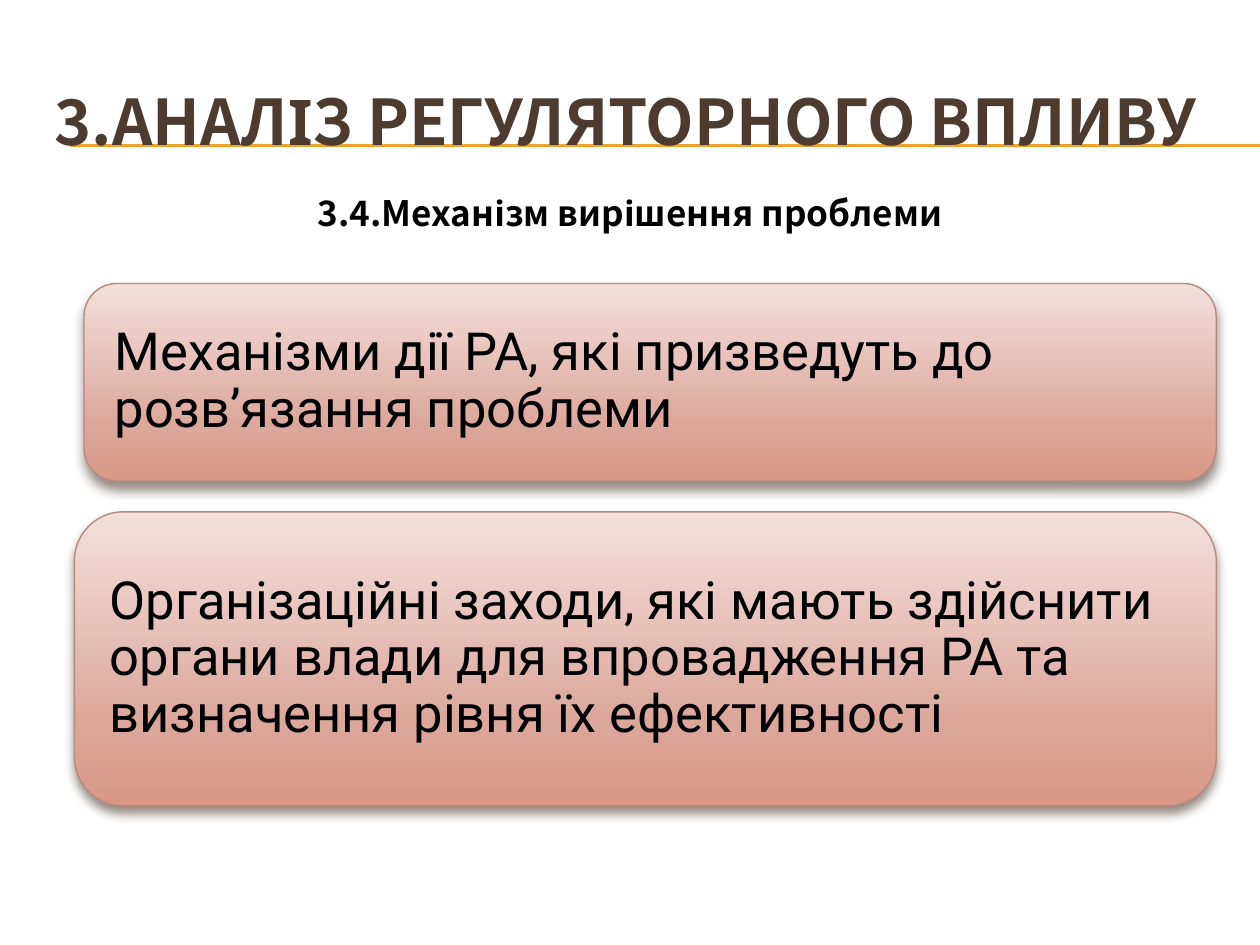
from pptx import Presentation
from pptx.dml.color import RGBColor as RGB
from pptx.enum.shapes import MSO_CONNECTOR as CONN, MSO_SHAPE as SHAPE
from pptx.enum.text import MSO_ANCHOR as ANCHOR, MSO_AUTO_SIZE as AUTO, PP_ALIGN as ALIGN
from pptx.oxml import parse_xml
from pptx.oxml.ns import nsdecls
from pptx.util import Pt

COLORS = {
    "title": "4E3B30", "text": "000000", "rule": "F0A22E", "border": "B58B80",
    "top": "F3E0DB", "middle": "DCA79B", "bottom": "D89787", "shadow": "4E3B30",
}
HEAD_FONT, BODY_FONT = "Noto Sans CJK KR", "Roboto"
GRADIENT = [(0, "top"), (72, "middle"), (100, "bottom")]


def color(name):
    return RGB.from_string(COLORS[name])


class SlideBuilder:
    def __init__(self, prs):
        self.s = prs.slides.add_slide(prs.slide_layouts[5])

    def set_text(self, sp, text, font, size, ink="text", bold=False, align=ALIGN.LEFT):
        tf = sp.text_frame
        tf.text = text
        tf.word_wrap = True
        p = tf.paragraphs[0]
        p.alignment = align
        f = p.runs[0].font
        f.name, f.size, f.bold = font, Pt(size), bold
        f.color.rgb = color(ink)
        return tf

    def title(self, text, x, y, w, h):
        sp = self.s.shapes.title
        sp.left, sp.top, sp.width, sp.height = map(Pt, (x, y, w, h))
        tf = self.set_text(sp, text, HEAD_FONT, 36, "title", bold=True)
        tf.auto_size = AUTO.NONE
        tf.vertical_anchor = ANCHOR.MIDDLE

    def subtitle(self, text, x, y, w, h):
        sp = self.s.shapes.add_textbox(*map(Pt, (x, y, w, h)))
        self.set_text(sp, text, HEAD_FONT, 20, bold=True, align=ALIGN.CENTER)

    def rule(self, x1, x2, y):
        """Draw a horizontal line behind everything else."""
        line = self.s.shapes.add_connector(CONN.STRAIGHT, Pt(x1), Pt(y), Pt(x2), Pt(y))
        line.line.color.rgb = color("rule")
        line.line.width = Pt(0.75)
        line.element.spPr.append(parse_xml(f"<a:effectLst {nsdecls('a')}/>"))
        self.s.shapes.element.insert(2, line.element)

    def card(self, text, x, y, w, h):
        sp = self.s.shapes.add_shape(SHAPE.ROUNDED_RECTANGLE, *map(Pt, (x, y, w, h)))
        sp.line.color.rgb = color("border")
        sp.line.width = Pt(0.79)
        self.gradient(sp)
        self.shadow(sp)
        tf = self.set_text(sp, text, BODY_FONT, 30)
        tf.vertical_anchor = ANCHOR.MIDDLE
        tf.margin_left = tf.margin_right = Pt(12)
        tf.paragraphs[0].line_spacing = 0.9

    def gradient(self, sp):
        stops = "".join(
            f'<a:gs pos="{pos * 1000}"><a:srgbClr val="{COLORS[name]}"/></a:gs>'
            for pos, name in GRADIENT)
        sp.element.spPr.find("{*}ln").addprevious(parse_xml(
            f'<a:gradFill {nsdecls("a")} rotWithShape="1"><a:gsLst>{stops}</a:gsLst>'
            '<a:lin ang="5400000" scaled="0"/></a:gradFill>'))

    def shadow(self, sp):
        sp.element.spPr.append(parse_xml(
            f'<a:effectLst {nsdecls("a")}>'
            f'<a:outerShdw blurRad="{Pt(6)}" dist="{Pt(4)}" dir="5400000" rotWithShape="0">'
            f'<a:srgbClr val="{COLORS["shadow"]}"><a:alpha val="60000"/></a:srgbClr>'
            '</a:outerShdw></a:effectLst>'))


def main():
    prs = Presentation()
    prs.slide_width, prs.slide_height = Pt(720), Pt(540)
    b = SlideBuilder(prs)
    b.title("3.АНАЛІЗ РЕГУЛЯТОРНОГО ВПЛИВУ", 24, 36, 684, 66)
    for y in (82.8, 83.5):
        b.rule(40, 720, y)
    b.subtitle("3.4.Механізм вирішення проблеми", 48, 106, 624, 32)
    b.card("Механізми дії РА, які призведуть до розв’язання проблеми",
           48, 162, 647, 113)
    b.card("Організаційні заходи, які мають здійснити органи влади для "
           "впровадження РА та визначення рівня їх ефективності",
           42.5, 292.5, 652.5, 168)
    prs.save("out.pptx")


if __name__ == "__main__":
    main()
